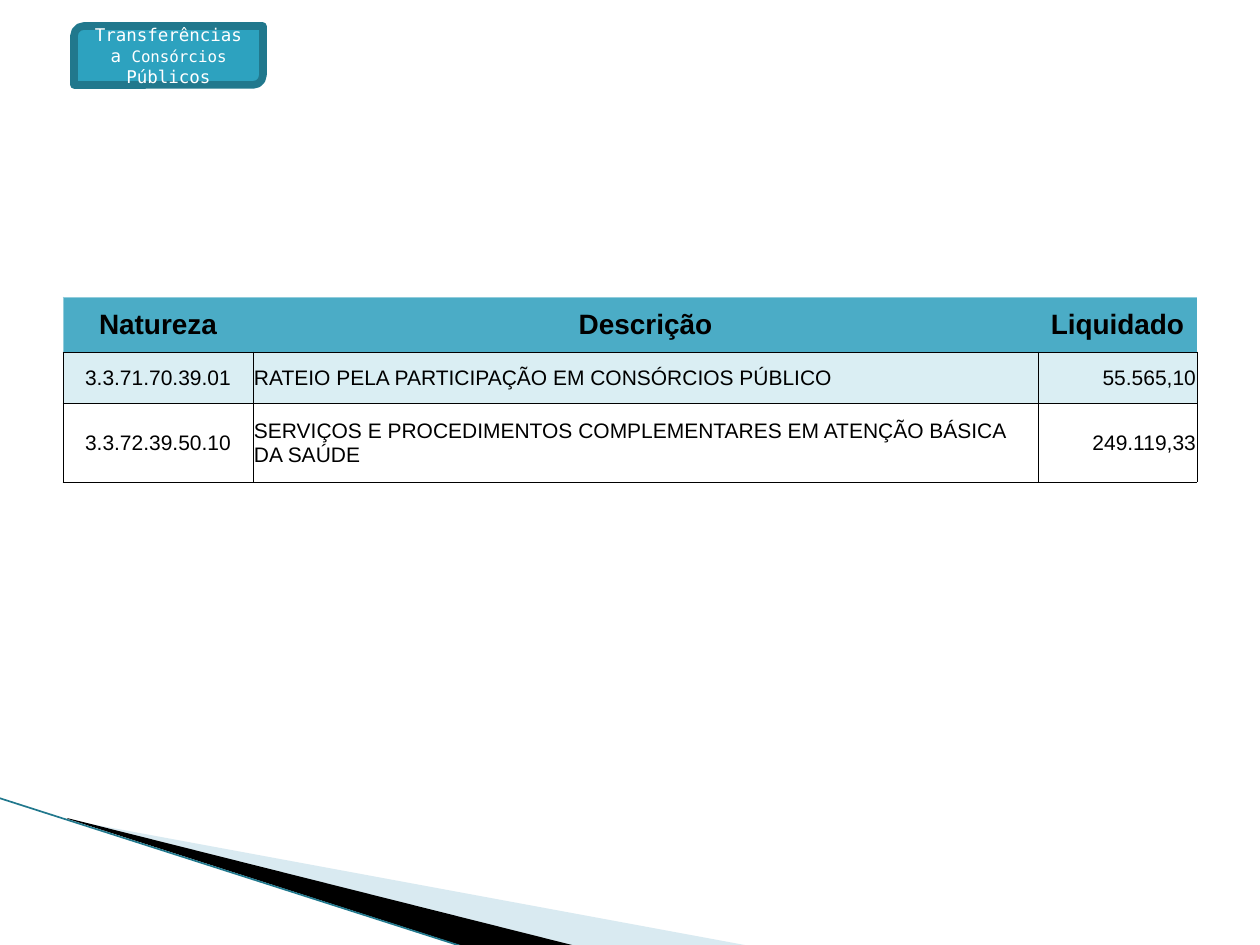
from typing import NamedTuple

from lxml.etree import SubElement
from pptx import Presentation
from pptx.dml.color import RGBColor
from pptx.enum.shapes import MSO_CONNECTOR, MSO_SHAPE
from pptx.enum.text import MSO_ANCHOR, PP_ALIGN
from pptx.oxml.ns import qn
from pptx.util import Pt

EMU_PER_PX = 914400 / 126
COLORS = {
    "black": "000000",
    "white": "FFFFFF",
    "pale_wedge": "A0CBDC",
    "edge": "21788D",
    "badge": "2DA2BF",
    "header": "4BACC6",
    "header_border": "92CDDC",
    "band": "DAEEF3",
}


class Wedge(NamedTuple):
    points: list[tuple[int, int]]
    color: str
    opacity: int


class Column(NamedTuple):
    title: str
    width: int
    align: PP_ALIGN


class Row(NamedTuple):
    values: tuple[str, ...]
    height: int
    fill: str | None


WEDGES = [
    Wedge([(69, 820), (750, 946), (575, 946), (69, 819)], "pale_wedge", 40),
    Wedge([(67, 818), (576, 946), (469, 948), (68, 819)], "black", 100),
]
COLUMNS = [
    Column("Natureza", 190, PP_ALIGN.CENTER),
    Column("Descrição", 785, PP_ALIGN.LEFT),
    Column("Liquidado", 159, PP_ALIGN.RIGHT),
]
HEADER = Row(tuple(column.title for column in COLUMNS), 55, "header")
EXPENSES = [
    Row(("3.3.71.70.39.01", "RATEIO PELA PARTICIPAÇÃO EM CONSÓRCIOS PÚBLICO", "55.565,10"),
        51, "band"),
    Row(("3.3.72.39.50.10",
         "SERVIÇOS E PROCEDIMENTOS COMPLEMENTARES EM ATENÇÃO BÁSICA DA SAÚDE",
         "249.119,33"), 79, None),
]


def px(length: int) -> int:
    return round(length * EMU_PER_PX)


def rgb(color: str) -> RGBColor:
    return RGBColor.from_string(COLORS[color])


def add_text(paragraph, text: str, *, size: int, font: str = "Arial",
             color: str = "black", bold: bool = False,
             align: PP_ALIGN = PP_ALIGN.CENTER) -> None:
    paragraph.alignment = align
    run = paragraph.add_run()
    run.text = text
    run.font.size = Pt(size)
    run.font.name = font
    run.font.bold = bold
    run.font.color.rgb = rgb(color)


def add_wedge(slide, wedge: Wedge) -> None:
    start, *rest = wedge.points
    builder = slide.shapes.build_freeform(*start, scale=EMU_PER_PX)
    builder.add_line_segments(rest, close=True)
    shape = builder.convert_to_shape()
    shape.shadow.inherit = False
    shape.line.fill.background()
    shape.fill.solid()
    shape.fill.fore_color.rgb = rgb(wedge.color)
    if wedge.opacity < 100:
        tint = shape.fill._xPr.find(qn("a:solidFill"))[0]
        SubElement(tint, qn("a:alpha"), val=str(wedge.opacity * 1000))


def add_edge_line(slide) -> None:
    edge = slide.shapes.add_connector(
        MSO_CONNECTOR.STRAIGHT, px(-1), px(798), px(467), px(948))
    edge.line.color.rgb = rgb("edge")
    edge.line.width = Pt(0.95)
    SubElement(edge._element.spPr, qn("a:effectLst"))


def add_badge(slide) -> None:
    badge = slide.shapes.add_shape(
        MSO_SHAPE.ROUND_2_DIAG_RECTANGLE, px(74), px(26), px(189), px(59))
    badge.shadow.inherit = False
    badge.fill.solid()
    badge.fill.fore_color.rgb = rgb("badge")
    badge.line.color.rgb = rgb("edge")
    badge.line.width = Pt(4.33)
    frame = badge.text_frame
    frame.word_wrap = True
    frame.vertical_anchor = MSO_ANCHOR.MIDDLE
    for text, size in (("Transferências a ", 10), ("Consórcios", 9), (" Públicos", 10)):
        add_text(frame.paragraphs[0], text, size=size,
                 font="DejaVu Sans Mono", color="white")


def set_borders(cell, colors: dict[str, str | None]) -> None:
    """Draw each side (L, R, T, B, in that order) in its colour, or leave it bare."""
    properties = cell._tc.get_or_add_tcPr()
    for position, (side, color) in enumerate(colors.items()):
        border = SubElement(properties, qn(f"a:ln{side}"), w=str(Pt(0.5)))
        if color:
            fill = SubElement(border, qn("a:solidFill"))
            SubElement(fill, qn("a:srgbClr"), val=COLORS[color])
        else:
            SubElement(border, qn("a:noFill"))
        properties.insert(position, border)


def fill_cell(cell, text: str, row: Row, column: Column) -> None:
    is_header = row is HEADER
    cell.vertical_anchor = MSO_ANCHOR.MIDDLE
    cell.margin_left = cell.margin_right = cell.margin_top = px(1)
    cell.margin_bottom = 0
    if row.fill:
        cell.fill.solid()
        cell.fill.fore_color.rgb = rgb(row.fill)
    else:
        cell.fill.background()
    add_text(cell.text_frame.paragraphs[0], text, size=16 if is_header else 12,
             bold=is_header, align=PP_ALIGN.CENTER if is_header else column.align)
    if is_header:
        left = "header_border" if column is COLUMNS[0] else None
        set_borders(cell, {"L": left, "R": None, "T": "header_border", "B": "black"})
    else:
        set_borders(cell, dict.fromkeys("LRTB", "black"))


def add_expense_table(slide) -> None:
    rows = [HEADER, *EXPENSES]
    width = sum(column.width for column in COLUMNS)
    height = sum(row.height for row in rows)
    table = slide.shapes.add_table(
        len(rows), len(COLUMNS), px(63), px(297), px(width), px(height)).table
    for index, column in enumerate(COLUMNS):
        table.columns[index].width = px(column.width)
    for row_index, row in enumerate(rows):
        table.rows[row_index].height = px(row.height)
        for column_index, (text, column) in enumerate(zip(row.values, COLUMNS)):
            fill_cell(table.cell(row_index, column_index), text, row, column)
    table.horz_banding = False
    table.first_row = False


def main() -> None:
    presentation = Presentation()
    presentation.slide_width = px(1260)
    presentation.slide_height = px(945)
    slide = presentation.slides.add_slide(presentation.slide_layouts[6])
    for wedge in WEDGES:
        add_wedge(slide, wedge)
    add_edge_line(slide)
    add_badge(slide)
    add_expense_table(slide)
    presentation.save("out.pptx")


if __name__ == "__main__":
    main()
